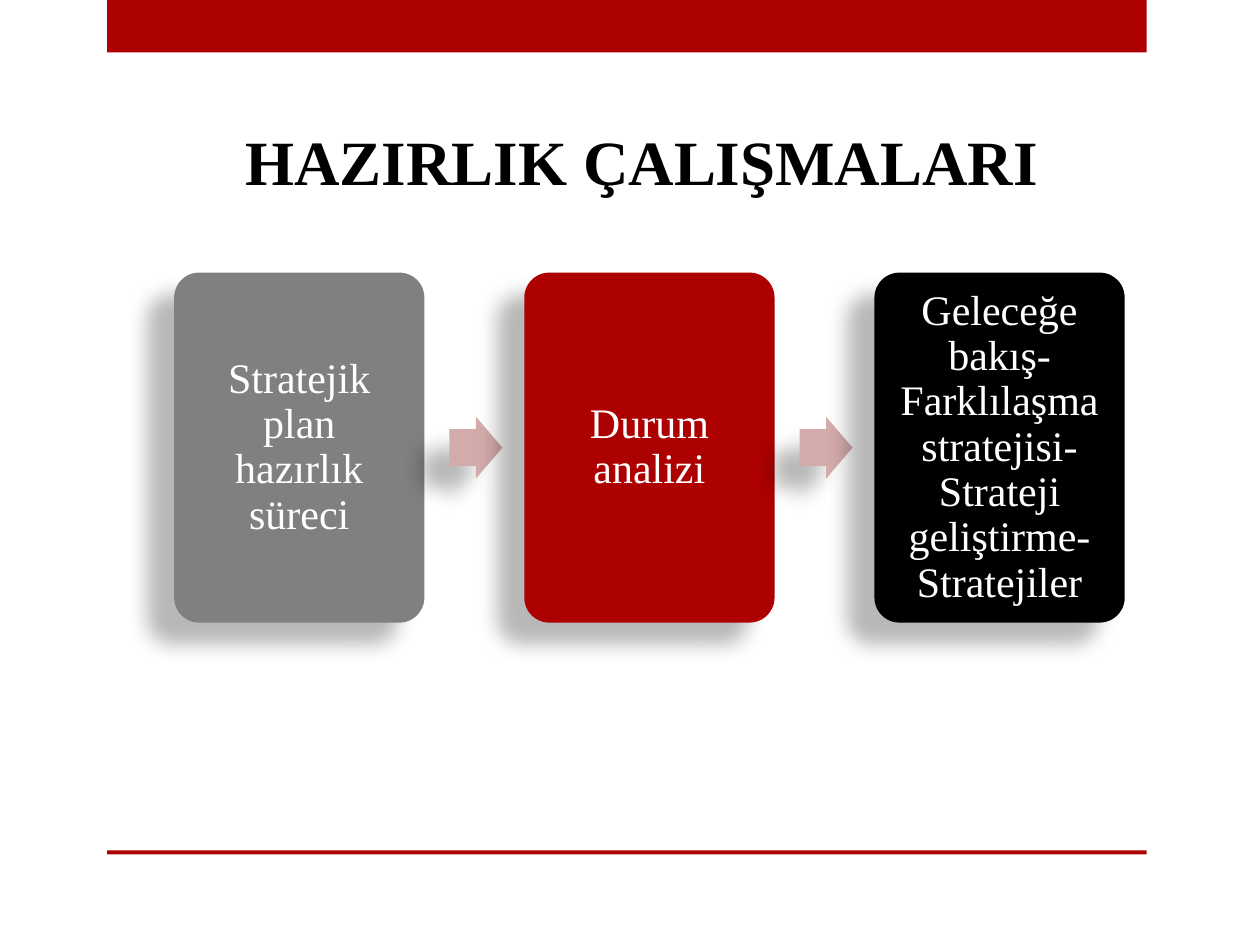
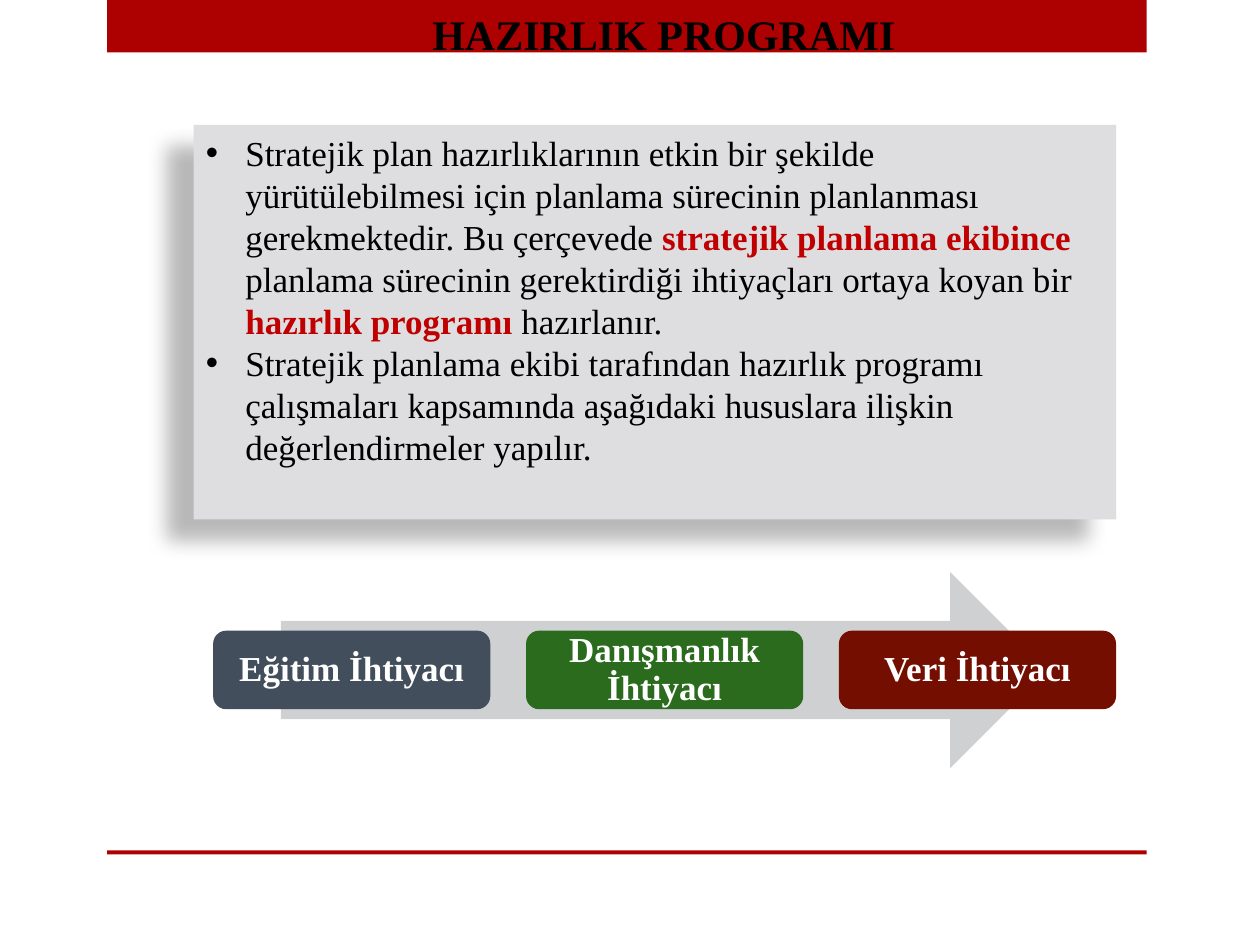
from dataclasses import dataclass

from lxml.etree import SubElement
from pptx import Presentation
from pptx.dml.color import RGBColor
from pptx.enum.shapes import MSO_SHAPE as Geometry
from pptx.enum.text import MSO_ANCHOR as Anchor, PP_ALIGN as Align
from pptx.oxml.ns import qn
from pptx.shapes.autoshape import Shape
from pptx.slide import Slide
from pptx.text.text import TextFrame, _Paragraph as Paragraph
from pptx.util import Pt

FONT = "Times New Roman"
RED = "AD0101"
BLACK = "000000"
WHITE = "FFFFFF"
GREY = "808080"
EMPHASIS = "C00000"
PALE_RED = "D3ABAB"
PANEL_GREY = "DEDEE0"
ARROW_GREY = "CFD0D2"


@dataclass(frozen=True)
class Box:
    left: float
    top: float
    width: float
    height: float


@dataclass(frozen=True)
class Stage:
    label: str
    color: str


@dataclass(frozen=True)
class TextStyle:
    size: float
    color: str = BLACK
    bold: bool = False


PREPARATION_STAGES = [
    Stage("Stratejik plan hazırlık süreci", GREY),
    Stage("Durum analizi", RED),
    Stage("Geleceğe bakış- Farklılaşma stratejisi- Strateji geliştirme- Stratejiler", BLACK),
]
NEEDS = [
    Stage("Eğitim İhtiyacı", "424E5B"),
    Stage("Danışmanlık İhtiyacı", "2B6B1D"),
    Stage("Veri İhtiyacı", "730E00"),
]

BODY = TextStyle(20)
KEY_TERM = TextStyle(20, EMPHASIS, bold=True)
PROGRAM_POINTS = [
    [
        ("Stratejik plan hazırlıklarının etkin bir şekilde yürütülebilmesi için planlama "
         "sürecinin planlanması gerekmektedir. Bu çerçevede ", BODY),
        ("stratejik planlama ekibince ", KEY_TERM),
        ("planlama sürecinin gerektirdiği ihtiyaçları ortaya koyan bir ", BODY),
        ("hazırlık programı ", KEY_TERM),
        ("hazırlanır.", BODY),
    ],
    [
        ("Stratejik planlama ekibi tarafından hazırlık programı çalışmaları kapsamında "
         "aşağıdaki hususlara ilişkin değerlendirmeler yapılır.", BODY),
    ],
]


def rgb(color: str) -> RGBColor:
    return RGBColor.from_string(color)


def add_filled(slide: Slide, geometry: Geometry, box: Box, color: str) -> Shape:
    shape = slide.shapes.add_shape(
        geometry, Pt(box.left), Pt(box.top), Pt(box.width), Pt(box.height))
    shape.shadow.inherit = False
    shape.fill.solid()
    shape.fill.fore_color.rgb = rgb(color)
    shape.line.fill.background()
    return shape


def cast_shadow(shape: Shape) -> None:
    """Give the shape a soft shadow towards the lower left."""
    effects = shape._element.spPr.find(qn("a:effectLst"))
    shadow = SubElement(effects, qn("a:outerShdw"), blurRad=str(Pt(11.8)),
                        dist=str(Pt(19.7)), dir=str(141 * 60000),
                        algn="ctr", rotWithShape="0")
    tint = SubElement(shadow, qn("a:srgbClr"), val=BLACK)
    SubElement(tint, qn("a:alpha"), val="28000")


def add_run(paragraph: Paragraph, text: str, style: TextStyle) -> None:
    run = paragraph.add_run()
    run.text = text
    run.font.name = FONT
    run.font.size = Pt(style.size)
    run.font.bold = style.bold
    run.font.color.rgb = rgb(style.color)


def add_bullet(paragraph: Paragraph, indent: float) -> None:
    properties = paragraph._p.get_or_add_pPr()
    properties.set("marL", str(Pt(indent)))
    properties.set("indent", str(-Pt(indent)))
    SubElement(properties, qn("a:buFont"), typeface="Arial")
    SubElement(properties, qn("a:buChar"), char="•")


def set_insets(frame: TextFrame, inset: float) -> None:
    frame.margin_left = frame.margin_right = Pt(inset)
    frame.margin_top = frame.margin_bottom = Pt(inset)


def add_stage(slide: Slide, box: Box, stage: Stage, style: TextStyle, inset: float) -> Shape:
    card = add_filled(slide, Geometry.ROUNDED_RECTANGLE, box, stage.color)
    frame = card.text_frame
    frame.word_wrap = True
    frame.vertical_anchor = Anchor.MIDDLE
    set_insets(frame, inset)
    paragraph = frame.paragraphs[0]
    paragraph.alignment = Align.CENTER
    paragraph.line_spacing = 0.9
    add_run(paragraph, stage.label, style)
    return card


def add_title(slide: Slide, text: str, box: Box, size: float, align: Align) -> None:
    title = slide.shapes.add_textbox(
        Pt(box.left), Pt(box.top), Pt(box.width), Pt(box.height))
    title.text_frame.word_wrap = True
    paragraph = title.text_frame.paragraphs[0]
    paragraph.alignment = align
    add_run(paragraph, text, TextStyle(size, bold=True))


def add_framed_slide(deck: Presentation) -> Slide:
    """Add a blank slide with the red top band and footer rule."""
    slide = deck.slides.add_slide(deck.slide_layouts[6])
    for top, height in ((0, 30), (486, 2.2)):
        add_filled(slide, Geometry.RECTANGLE, Box(61.2, top, 594, height), RED)
    return slide


def build_preparation_work(deck: Presentation) -> None:
    slide = add_framed_slide(deck)
    left, top, width, height, step = 99.5, 155.8, 143, 200, 200.1
    arrow_width, arrow_height, arrow_gap = 30.3, 35.4, 14.3
    for index, stage in enumerate(PREPARATION_STAGES):
        card_left = left + index * step
        if index:
            arrow_left = card_left - step + width + arrow_gap
            arrow_top = top + (height - arrow_height) / 2
            arrow = add_filled(slide, Geometry.RIGHT_ARROW,
                               Box(arrow_left, arrow_top, arrow_width, arrow_height), PALE_RED)
            arrow.adjustments[0] = 0.6
            cast_shadow(arrow)
        card = add_stage(slide, Box(card_left, top, width, height), stage,
                         TextStyle(24, WHITE), inset=7.2)
        card.adjustments[0] = 0.1
        cast_shadow(card)
    add_title(slide, "HAZIRLIK ÇALIŞMALARI", Box(133.2, 66.2, 504.7, 51.1), 36, Align.LEFT)


def build_preparation_program(deck: Presentation) -> None:
    slide = add_framed_slide(deck)
    panel = add_filled(slide, Geometry.RECTANGLE, Box(110.6, 71.4, 527.2, 225.4), PANEL_GREY)
    cast_shadow(panel)
    frame = panel.text_frame
    frame.word_wrap = True
    frame.vertical_anchor = Anchor.TOP
    for index, point in enumerate(PROGRAM_POINTS):
        paragraph = frame.add_paragraph() if index else frame.paragraphs[0]
        paragraph.alignment = Align.LEFT
        add_bullet(paragraph, indent=22.5)
        for text, style in point:
            add_run(paragraph, text, style)

    add_title(slide, "HAZIRLIK PROGRAMI", Box(206.6, 1.4, 345.6, 36), 24, Align.CENTER)

    add_filled(slide, Geometry.RIGHT_ARROW, Box(160.5, 326.8, 438.5, 112.2), ARROW_GREY)
    for index, need in enumerate(NEEDS):
        add_stage(slide, Box(121.8 + index * 178.8, 360.4, 158.4, 44.9), need,
                  TextStyle(20, WHITE, bold=True), inset=5.8)


def main() -> None:
    deck = Presentation()
    deck.slide_width, deck.slide_height = Pt(720), Pt(540)
    build_preparation_work(deck)
    build_preparation_program(deck)
    deck.save("out.pptx")


if __name__ == "__main__":
    main()
